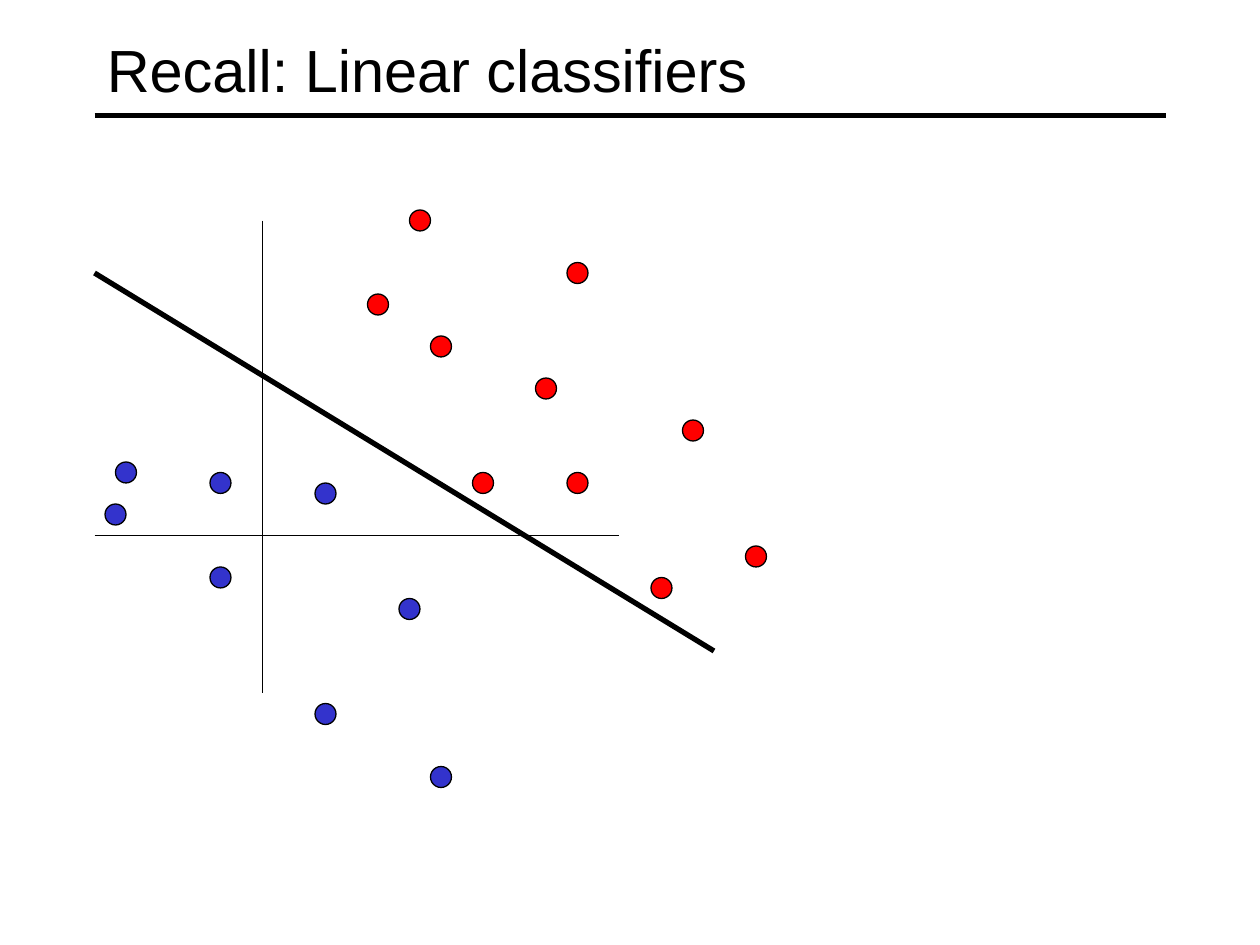
from lxml.etree import SubElement
from pptx import Presentation
from pptx.dml.color import RGBColor
from pptx.enum.shapes import MSO_CONNECTOR, MSO_SHAPE
from pptx.enum.text import MSO_ANCHOR
from pptx.oxml.ns import qn
from pptx.util import Pt

BLACK = RGBColor(0x00, 0x00, 0x00)
BLUE = RGBColor(0x33, 0x33, 0xCC)
RED = RGBColor(0xFF, 0x00, 0x00)

TITLE = "Recall: Linear classifiers"
DOT = 12
THIN, THICK = 0.75, 3

CLASSES = [
    (BLUE, [(66, 264), (120, 270), (120, 324), (60, 288), (180, 276),
            (228, 342), (180, 402), (246, 438)]),
    (RED, [(246, 192), (306, 216), (324, 270), (270, 270), (210, 168),
           (372, 330), (390, 240), (324, 150), (426, 312), (234, 120)]),
]
TITLE_RULE = (54, 66, 666, 66, THICK)
BOUNDARY = (54, 156, 408, 372, THICK)
AXES = [(150, 126, 150, 396, THIN), (54, 306, 354, 306, THIN)]


def add_line(s, x1, y1, x2, y2, width):
    c = s.shapes.add_connector(MSO_CONNECTOR.STRAIGHT, Pt(x1), Pt(y1), Pt(x2), Pt(y2))
    c.line.color.rgb = BLACK
    c.line.width = Pt(width)
    SubElement(c._element.spPr, qn("a:effectLst"))


def add_title(s):
    sp = s.shapes.add_textbox(Pt(54), Pt(6), Pt(612), Pt(66))
    tf = sp.text_frame
    tf.word_wrap = True
    tf.vertical_anchor = MSO_ANCHOR.MIDDLE
    r = tf.paragraphs[0].add_run()
    r.text = TITLE
    r.font.name = "Arial"
    r.font.size = Pt(34)
    r.font.color.rgb = BLACK


def add_dot(s, left, top, color):
    sp = s.shapes.add_shape(MSO_SHAPE.OVAL, Pt(left), Pt(top), Pt(DOT), Pt(DOT))
    sp.shadow.inherit = False
    sp.fill.solid()
    sp.fill.fore_color.rgb = color
    sp.line.color.rgb = BLACK
    sp.line.width = Pt(THIN)


prs = Presentation()
prs.slide_width, prs.slide_height = Pt(720), Pt(540)
s = prs.slides.add_slide(prs.slide_layouts[6])

add_line(s, *TITLE_RULE)
add_title(s)
for color, dots in CLASSES:
    for left, top in dots:
        add_dot(s, left, top, color)
for line in [BOUNDARY, *AXES]:
    add_line(s, *line)

prs.save("out.pptx")
